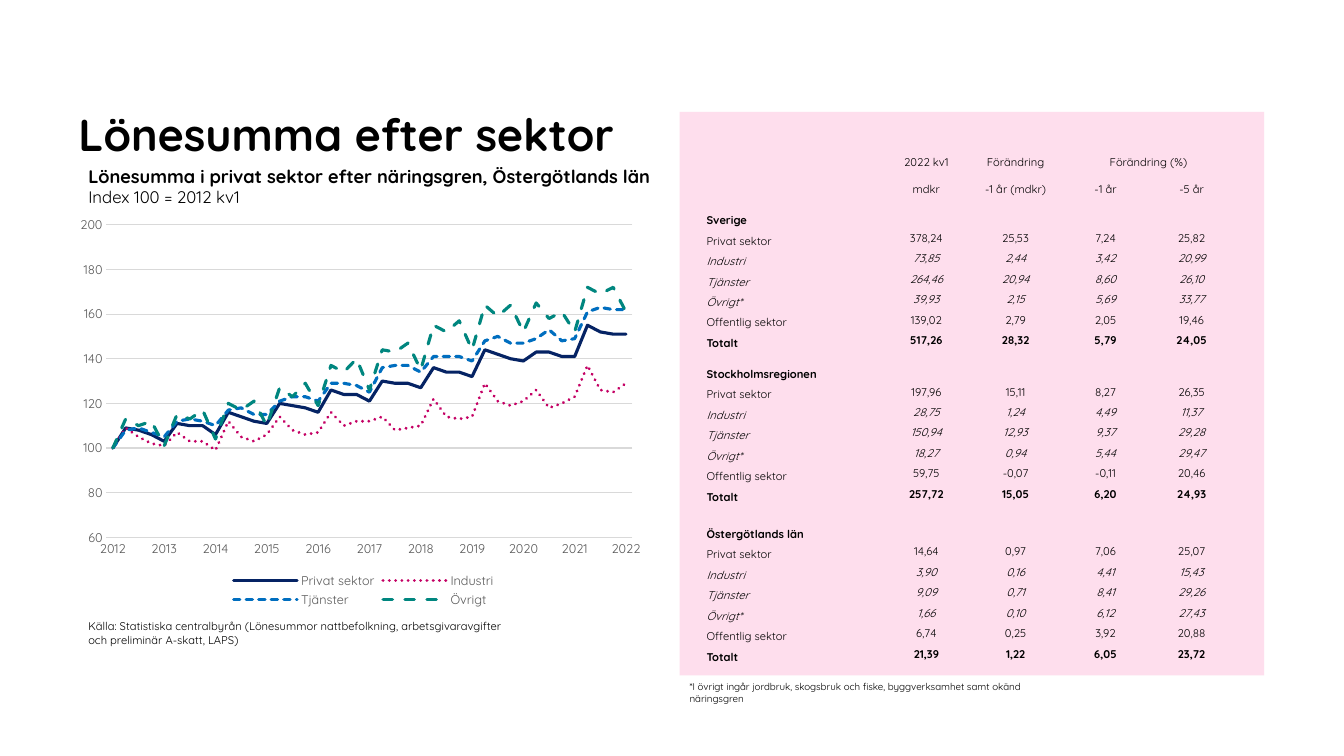
from lxml.etree import SubElement
from pptx import Presentation
from pptx.chart.data import CategoryChartData
from pptx.dml.color import RGBColor
from pptx.enum.chart import XL_CHART_TYPE, XL_LEGEND_POSITION, XL_TICK_MARK
from pptx.enum.dml import MSO_LINE
from pptx.enum.shapes import MSO_SHAPE
from pptx.enum.text import MSO_ANCHOR, PP_ALIGN
from pptx.oxml import parse_xml
from pptx.oxml.ns import nsdecls, qn
from pptx.util import Pt

FONT = "Quicksand"
BLACK = RGBColor(0x00, 0x00, 0x00)
GRAY = RGBColor(0x59, 0x59, 0x59)
GRID = RGBColor(0xD9, 0xD9, 0xD9)
PINK = RGBColor(0xFE, 0xDE, 0xED)
NAVY = RGBColor(0x05, 0x23, 0x64)
MAGENTA = RGBColor(0xC4, 0x00, 0x64)
BLUE = RGBColor(0x00, 0x6E, 0xBF)
TEAL = RGBColor(0x00, 0x86, 0x7F)
PLAIN_TABLE = "{2D5ABB26-0587-4C30-8999-92F81FD0307C}"

SERIES = [
    ("Privat sektor", NAVY, None,
     [100, 109, 108, 106, 103, 111, 110, 110, 106, 116, 114, 112, 111, 120,
      119, 118, 116, 126, 124, 124, 121, 130, 129, 129, 127, 136, 134, 134,
      132, 144, 142, 140, 139, 143, 143, 141, 141, 155, 152, 151, 151]),
    ("Industri", MAGENTA, MSO_LINE.ROUND_DOT,
     [100, 109, 105, 102, 101, 107, 103, 103, 99, 112, 105, 103, 106, 114,
      108, 106, 107, 116, 110, 112, 112, 114, 108, 109, 110, 122, 114, 113,
      114, 129, 121, 119, 121, 126, 118, 120, 123, 137, 126, 125, 129]),
    ("Tjänster", BLUE, MSO_LINE.SQUARE_DOT,
     [100, 108, 109, 107, 105, 112, 113, 112, 110, 117, 118, 115, 115, 121,
      123, 123, 121, 129, 129, 128, 125, 136, 137, 137, 134, 141, 141, 141,
      139, 148, 150, 147, 147, 149, 153, 148, 149, 161, 163, 162, 162]),
    ("Övrigt", TEAL, MSO_LINE.DASH,
     [100, 113, 110, 112, 101, 115, 113, 117, 104, 120, 117, 121, 110, 127,
      123, 129, 119, 137, 134, 140, 126, 144, 143, 147, 135, 155, 152, 157,
      144, 164, 159, 164, 152, 165, 158, 161, 152, 172, 169, 172, 161]),
]

HEADERS = [
    ["", "2022 kv1", "Förändring", "Förändring (%)", ""],
    ["", "mdkr", "-1 år (mdkr)", "-1 år", "-5 år"],
]
SECTORS = ["Privat sektor", "Industri", "Tjänster", "Övrigt*", "Offentlig sektor", "Totalt"]
ITALIC_SECTORS = {"Industri", "Tjänster", "Övrigt*"}
REGIONS = [
    ("Sverige", 22,
     ["378,24 25,53 7,24 25,82", "73,85 2,44 3,42 20,99", "264,46 20,94 8,60 26,10",
      "39,93 2,15 5,69 33,77", "139,02 2,79 2,05 19,46", "517,26 28,32 5,79 24,05"]),
    ("Stockholmsregionen", 22,
     ["197,96 15,11 8,27 26,35", "28,75 1,24 4,49 11,37", "150,94 12,93 9,37 29,28",
      "18,27 0,94 5,44 29,47", "59,75 -0,07 -0,11 20,46", "257,72 15,05 6,20 24,93"]),
    ("Östergötlands län", 26.5,
     ["14,64 0,97 7,06 25,07", "3,90 0,16 4,41 15,43", "9,09 0,71 8,41 29,26",
      "1,66 0,10 6,12 27,43", "6,74 0,25 3,92 20,88", "21,39 1,22 6,05 23,72"]),
]


def style_font(font, size, color=BLACK, bold=False, italic=False):
    """Apply the slide's typeface with the given size and look."""
    font.name = FONT
    font.size = Pt(size)
    font.color.rgb = color
    font.bold = bold
    font.italic = italic


def add_text(page, left, top, width, height, lines, anchor=MSO_ANCHOR.TOP, inset=None):
    """Add a text box with one paragraph per (text, size, bold) line."""
    box = page.shapes.add_textbox(Pt(left), Pt(top), Pt(width), Pt(height))
    frame = box.text_frame
    frame.word_wrap = True
    frame.vertical_anchor = anchor
    if inset is not None:
        frame.margin_left = frame.margin_right = Pt(inset)
        frame.margin_top = frame.margin_bottom = Pt(inset)
    for index, (text, size, bold) in enumerate(lines):
        para = frame.add_paragraph() if index else frame.paragraphs[0]
        para.text = text
        style_font(para.font, size, bold=bold)


def add_panel(page, left, top, width, height):
    """Add the flat pink panel behind the table."""
    panel = page.shapes.add_shape(MSO_SHAPE.RECTANGLE, Pt(left), Pt(top), Pt(width), Pt(height))
    panel.shadow.inherit = False
    panel.fill.solid()
    panel.fill.fore_color.rgb = PINK
    panel.line.fill.background()


def fill_cell(cell, text, anchor, align, bold, italic):
    """Write one table cell without a fill."""
    cell.fill.background()
    cell.margin_left = cell.margin_right = cell.margin_top = Pt(0.7)
    cell.margin_bottom = Pt(0)
    cell.vertical_anchor = anchor
    para = cell.text_frame.paragraphs[0]
    para.alignment = align
    if text:
        para.text = text
    else:
        SubElement(para._p, qn("a:endParaRPr"), sz="800")
    style_font(para.font, 8, bold=bold, italic=italic)


def table_rows():
    """List the rows as (height, texts, number anchor, bold, italic)."""
    rows = [(height, texts, MSO_ANCHOR.BOTTOM, False, False)
            for height, texts in zip((24, 19.5), HEADERS)]
    for region, height, figures in REGIONS:
        rows.append((height, [region] + [""] * 4, MSO_ANCHOR.BOTTOM, True, False))
        for sector, numbers in zip(SECTORS, figures):
            rows.append((14.64, [sector] + numbers.split(), MSO_ANCHOR.MIDDLE,
                         sector == "Totalt", sector in ITALIC_SECTORS))
    return rows


def add_wage_table(page, left, top, widths):
    """Add the table of wage sums by region and sector."""
    rows = table_rows()
    total_height = sum(row[0] for row in rows)
    table = page.shapes.add_table(len(rows), len(widths), Pt(left), Pt(top),
                                  Pt(sum(widths)), Pt(total_height)).table
    table.first_row = table.horz_banding = False
    table._tbl.tblPr.find(qn("a:tableStyleId")).text = PLAIN_TABLE
    for column, width in zip(table.columns, widths):
        column.width = Pt(width)
    for row_index, (height, texts, anchor, bold, italic) in enumerate(rows):
        table.rows[row_index].height = Pt(height)
        for column_index, text in enumerate(texts):
            first = column_index == 0
            fill_cell(table.cell(row_index, column_index), text,
                      MSO_ANCHOR.BOTTOM if first else anchor,
                      PP_ALIGN.LEFT if first else PP_ALIGN.CENTER, bold, italic)
    table.cell(0, 3).merge(table.cell(0, 4))


def manual_layout(x, y, width, height, inner=False):
    """Build a chart layout element from fractions of the chart's size."""
    target = '<c:layoutTarget val="inner"/>' if inner else ""
    return parse_xml(
        f'<c:layout {nsdecls("c")}><c:manualLayout>{target}'
        '<c:xMode val="edge"/><c:yMode val="edge"/>'
        f'<c:x val="{x}"/><c:y val="{y}"/><c:w val="{width}"/><c:h val="{height}"/>'
        '</c:manualLayout></c:layout>')


def set_layout(element, layout, position):
    """Replace an element's layout at the given child position."""
    for old in element.findall(qn("c:layout")):
        element.remove(old)
    element.insert(position, layout)


def style_axes(chart):
    """Format the year axis and the index axis."""
    years, index = chart.category_axis, chart.value_axis
    for axis in (years, index):
        axis.major_tick_mark = axis.minor_tick_mark = XL_TICK_MARK.NONE
        style_font(axis.tick_labels.font, 9, GRAY)
    index.minimum_scale, index.maximum_scale, index.major_unit = 60, 200, 20
    index.format.line.fill.background()
    for line in (years.format.line, index.major_gridlines.format.line):
        line.color.rgb = GRID
        line.width = Pt(0.75)


def add_index_chart(page, left, top, width, height):
    """Add the line chart of the wage sum index by quarter."""
    data = CategoryChartData()
    data.categories = [str(2012 + quarter // 4) if quarter % 4 == 0 else ""
                       for quarter in range(41)]
    for name, _, _, values in SERIES:
        data.add_series(name, values)
    chart = page.shapes.add_chart(XL_CHART_TYPE.LINE, Pt(left), Pt(top),
                                  Pt(width), Pt(height), data).chart
    style_font(chart.font, 10)
    chart.has_title = False
    chart.plots[0].vary_by_categories = False
    for series, (_, color, dash, _) in zip(chart.plots[0].series, SERIES):
        series.smooth = False
        line = series.format.line
        line.color.rgb = color
        line.width = Pt(2.25)
        if dash:
            line.dash_style = dash
        line._get_or_add_ln().set("cap", "rnd")
    style_axes(chart)
    chart.has_legend = True
    chart.legend.position = XL_LEGEND_POSITION.BOTTOM
    chart.legend.include_in_layout = False
    style_font(chart.legend.font, 9, GRAY)
    set_layout(chart.legend._element, manual_layout(0.27, 0.89, 0.46, 0.1), 1)
    plot_area = chart._chartSpace.chart.plotArea
    set_layout(plot_area, manual_layout(0.06, 0.04, 0.9, 0.77, inner=True), 0)


def main():
    """Build the slide and save the deck."""
    deck = Presentation()
    deck.slide_width, deck.slide_height = Pt(960), Pt(540)
    page = deck.slides.add_slide(deck.slide_layouts[6])
    add_text(page, 56, 26.5, 664, 88, [("Lönesumma efter sektor", 32, True)],
             MSO_ANCHOR.BOTTOM, inset=0)
    add_text(page, 56, 439, 317.5, 27, [
        ("Källa: Statistiska centralbyrån (Lönesummor nattbefolkning, "
         "arbetsgivaravgifter och preliminär A-skatt, LAPS)", 8, False)])
    add_panel(page, 485.5, 80, 417.5, 402.5)
    add_text(page, 56, 114.5, 417.5, 37.5, [
        ("Lönesumma i privat sektor efter näringsgren, Östergötlands län", 13, True),
        ("Index 100 = 2012 kv1", 12, False)])
    add_wage_table(page, 504, 97, [127.5, 60.5, 67, 61.5, 61.5])
    add_text(page, 485.5, 482.5, 281, 32, [
        ("*I övrigt ingår jordbruk, skogsbruk och fiske, byggverksamhet "
         "samt okänd näringsgren", 7, False)])
    add_index_chart(page, 51, 149, 417.5, 290)
    deck.save("out.pptx")


if __name__ == "__main__":
    main()
